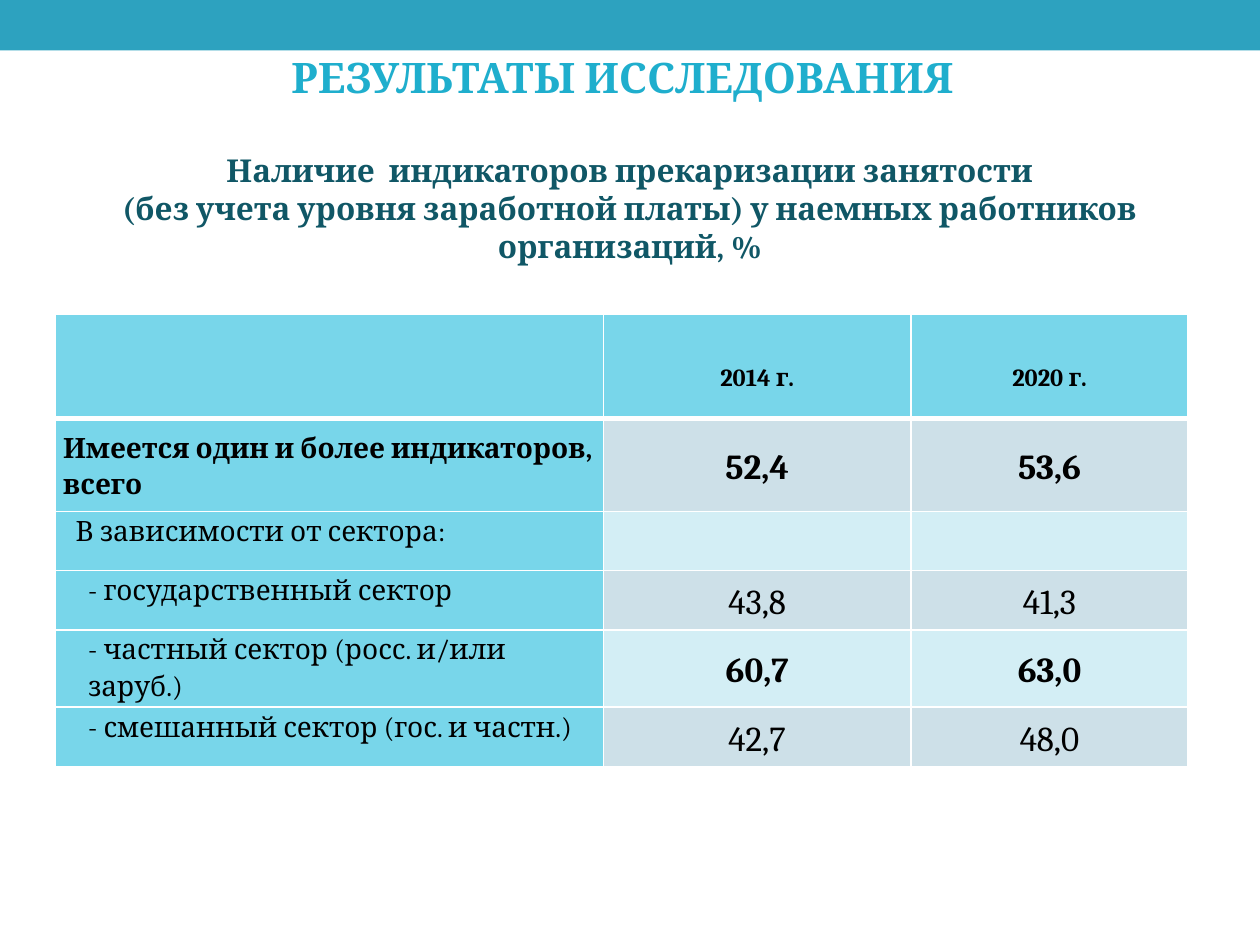
from dataclasses import dataclass

from lxml.etree import SubElement
from pptx import Presentation
from pptx.dml.color import RGBColor
from pptx.enum.shapes import MSO_SHAPE
from pptx.enum.text import MSO_ANCHOR, PP_ALIGN
from pptx.oxml.ns import qn
from pptx.util import Inches, Pt


@dataclass(frozen=True)
class Theme:
    font: str = "Cambria"
    bar: str = "2DA2BF"
    title: str = "1FAECD"
    topic: str = "105766"
    ink: str = "000000"
    line: str = "FFFFFF"
    head: str = "78D6EA"
    bands: tuple = ("CDE0E8", "D3EEF5")
    title_size: int = 24
    topic_size: int = 18
    head_size: int = 14
    label_size: int = 16
    value_size: int = 20


theme = Theme()


def write(frame, text, size, color, bold, align):
    frame.word_wrap = True
    frame.text = text
    for para in frame.paragraphs:
        para.alignment = align
        for run in para.runs:
            run.font.name = theme.font
            run.font.size = Pt(size)
            run.font.bold = bold
            run.font.color.rgb = RGBColor.from_string(color)


def edge(cell, side, width):
    line = SubElement(cell._tc.get_or_add_tcPr(), qn("a:ln" + side), w=str(Pt(width)))
    fill = SubElement(line, qn("a:solidFill"))
    SubElement(fill, qn("a:srgbClr"), val=theme.line)


deck = Presentation()
deck.slide_width, deck.slide_height = Inches(10), Inches(7.5)
slide = deck.slides.add_slide(deck.slide_layouts[6])
shapes = slide.shapes

# Top bar
bar = shapes.add_shape(MSO_SHAPE.RECTANGLE, 0, 0, deck.slide_width, Inches(0.4))
bar.shadow.inherit = False
bar.fill.solid()
bar.fill.fore_color.rgb = RGBColor.from_string(theme.bar)
bar.line.fill.background()

# Title and topic
title = shapes.add_textbox(0, Inches(0.36), Inches(9.88), Inches(0.5))
write(title.text_frame, "РЕЗУЛЬТАТЫ ИССЛЕДОВАНИЯ",
      theme.title_size, theme.title, True, PP_ALIGN.CENTER)
topic = shapes.add_textbox(Inches(0.12), Inches(1.15), Inches(9.76), Inches(0.71))
write(topic.text_frame,
      "Наличие  индикаторов прекаризации занятости\n"
      "(без учета уровня заработной платы) у наемных работников организаций, %",
      theme.topic_size, theme.topic, True, PP_ALIGN.CENTER)

# Table data: texts, label indent, bold label, bold values
rows = [
    (("", "2014 г.", "2020 г."), 0, True, True),
    (("Имеется один и более индикаторов, всего", "52,4", "53,6"), 0, True, True),
    (("В зависимости от сектора:", "", ""), 0.1, False, False),
    (("- государственный сектор", "43,8", "41,3"), 0.2, False, False),
    (("- частный сектор (росс. и/или заруб.)", "60,7", "63,0"), 0.2, False, True),
    (("- смешанный сектор (гос. и частн.)", "42,7", "48,0"), 0.2, False, False),
]
widths = [4.35, 2.44, 2.2]
heights = [0.83, 0.74] + [0.47] * 4

# Table grid
table = shapes.add_table(len(rows), len(widths), Inches(0.44), Inches(2.49),
                         Inches(sum(widths)), Inches(sum(heights))).table
table.first_row = table.horz_banding = False
for col, width in zip(table.columns, widths):
    col.width = Inches(width)
for row, height in zip(table.rows, heights):
    row.height = Inches(height)

# Table cells
for r, (texts, indent, strong, heavy) in enumerate(rows):
    for c, text in enumerate(texts):
        cell = table.cell(r, c)
        for side in "LRTB":
            thick = (r, side) in ((0, "B"), (1, "T"))
            edge(cell, side, 3 if thick else 1)
        label = c == 0
        tint = theme.head if r == 0 or label else theme.bands[(r - 1) % 2]
        cell.fill.solid()
        cell.fill.fore_color.rgb = RGBColor.from_string(tint)
        if not text:
            continue
        cell.margin_left = cell.margin_right = Inches(0.06)
        cell.margin_top = Inches(0.2 if r == 0 else 0)
        cell.margin_bottom = 0
        top = label and r > 1
        cell.vertical_anchor = MSO_ANCHOR.TOP if top else MSO_ANCHOR.MIDDLE
        size = theme.label_size if label else theme.value_size
        write(cell.text_frame, text, theme.head_size if r == 0 else size, theme.ink,
              strong if label else heavy, PP_ALIGN.LEFT if label else PP_ALIGN.CENTER)
        para = cell.text_frame.paragraphs[0]
        if r:
            para.line_spacing = 1.15
        if label and indent:
            para._p.get_or_add_pPr().set("marL", str(Inches(indent)))

deck.save("out.pptx")
